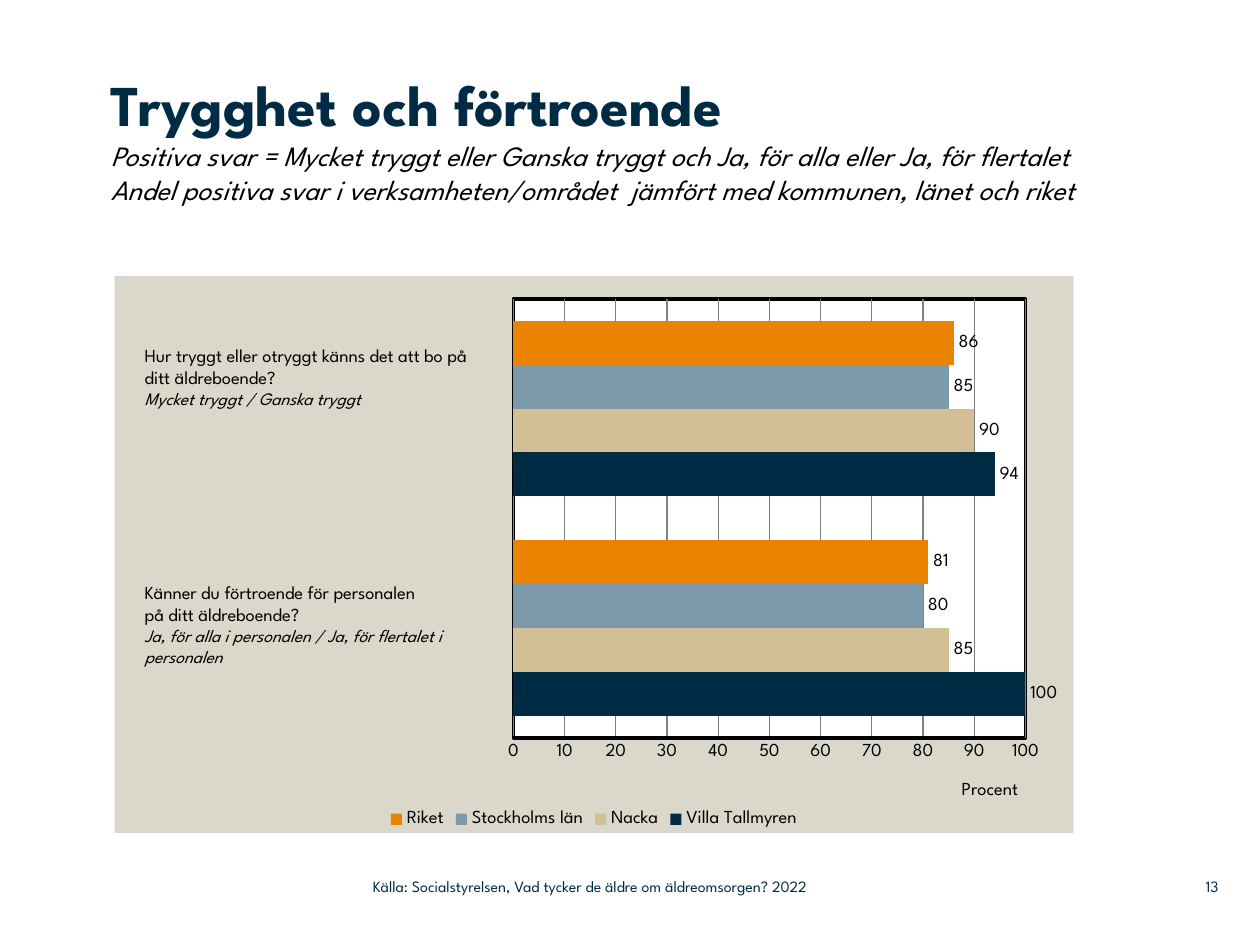
from pptx import Presentation
from pptx.chart.data import CategoryChartData
from pptx.dml.color import RGBColor
from pptx.enum.chart import XL_CHART_TYPE as Chart, XL_LABEL_POSITION as LabelPos
from pptx.enum.chart import XL_LEGEND_POSITION as LegendPos, XL_TICK_MARK as Tick
from pptx.enum.text import MSO_ANCHOR as Anchor, PP_ALIGN as Align
from pptx.oxml import parse_xml
from pptx.oxml.ns import nsdecls
from pptx.util import Inches, Pt

NAVY = RGBColor(0x00, 0x2B, 0x45)
SAND = RGBColor(0xD3, 0xBF, 0x96)
STEEL = RGBColor(0x7D, 0x9A, 0xAA)
ORANGE = RGBColor(0xE9, 0x83, 0x00)
PANEL = RGBColor(0xDA, 0xD7, 0xCB)
GREY = RGBColor(0x80, 0x80, 0x80)
WHITE = RGBColor(0xFF, 0xFF, 0xFF)
BLACK = RGBColor(0, 0, 0)
FONT = "League Spartan"

TITLE = [
    ("Trygghet och förtroende", 33, NAVY, True, False),
    ("Positiva svar = Mycket tryggt eller Ganska tryggt och Ja, för alla eller Ja, för flertalet",
     16, BLACK, False, True),
    ("Andel positiva svar i verksamheten/området  jämfört med kommunen, länet och riket",
     16, BLACK, False, True),
]
QUESTIONS = [
    ((1.05, 2.68, 2.98, 0.81), [
        ("Hur tryggt eller otryggt känns det att bo på ditt äldreboende?", 10.5, BLACK, False, False),
        ("Mycket tryggt / Ganska tryggt", 10, BLACK, False, True),
    ]),
    ((1.05, 4.56, 3, 0.98), [
        ("Känner du förtroende för personalen", 10.5, BLACK, False, False),
        ("på ditt äldreboende?", 10.5, BLACK, False, False),
        ("Ja, för alla i personalen / Ja, för flertalet i personalen", 10, BLACK, False, True),
    ]),
]
SOURCE = [("Källa: Socialstyrelsen, Vad tycker de äldre om äldreomsorgen? 2022", 9, NAVY, False, False)]
PAGE = [("13", 9, NAVY, False, False)]
SERIES = [
    ("Villa Tallmyren", (100, 94), NAVY),
    ("Nacka", (85, 90), SAND),
    ("Stockholms län", (80, 85), STEEL),
    ("Riket", (81, 86), ORANGE),
]
PLOT = {"x": 0.416, "y": 0.041, "w": 0.534, "h": 0.789}
AXIS_TITLE = {"x": 0.88, "y": 0.9}


def style(font, size, color=BLACK, bold=False, italic=False):
    font.name, font.size, font.bold, font.italic = FONT, Pt(size), bold, italic
    font.color.rgb = color


def add_text(slide, box, lines, inset=True, anchor=Anchor.TOP, align=Align.LEFT):
    tf = slide.shapes.add_textbox(*map(Inches, box)).text_frame
    tf.word_wrap = True
    tf.vertical_anchor = anchor
    if not inset:
        tf.margin_left = tf.margin_top = tf.margin_right = tf.margin_bottom = 0
    for i, (text, *look) in enumerate(lines):
        p = tf.add_paragraph() if i else tf.paragraphs[0]
        p.text, p.alignment = text, align
        style(p.font, *look)


def manual_layout(places, inner=False):
    parts = '<c:layoutTarget val="inner"/>' if inner else ""
    parts += "".join(f'<c:{k}Mode val="edge"/>' for k in "xy")
    parts += "".join(f'<c:{k} val="{v}"/>' for k, v in places.items())
    return parse_xml(f'<c:layout {nsdecls("c")}><c:manualLayout>{parts}</c:manualLayout></c:layout>')


def fill_xml(color, line=""):
    return parse_xml(f'<c:spPr {nsdecls("c", "a")}><a:solidFill><a:srgbClr val="{color}"/>'
                     f'</a:solidFill>{line}</c:spPr>')


def add_bars(slide):
    data = CategoryChartData()
    data.categories = ["1", "2"]
    for name, values, _ in SERIES:
        data.add_series(name, values)
    box = map(Inches, (0.91, 2.19, 7.61, 4.42))
    chart = slide.shapes.add_chart(Chart.BAR_CLUSTERED, *box, data).chart
    style(chart.font, 10.5)
    chart.has_title = False
    chart.has_legend = True
    chart.legend.position = LegendPos.BOTTOM
    chart.legend.include_in_layout = False
    style(chart.legend.font, 10.5)

    plot = chart.plots[0]
    plot.gap_width, plot.overlap = 100, 0
    plot.vary_by_categories = False
    for series, (_, _, color) in zip(plot.series, SERIES):
        series.format.fill.solid()
        series.format.fill.fore_color.rgb = color
        labels = series.data_labels
        labels.show_value = True
        labels.position = LabelPos.OUTSIDE_END
        style(labels.font, 10.5)

    chart.category_axis.visible = False
    axis = chart.value_axis
    axis.minimum_scale, axis.maximum_scale, axis.major_unit = 0, 100, 10
    axis.major_tick_mark = axis.minor_tick_mark = Tick.NONE
    axis.format.line.color.rgb = BLACK
    axis.format.line.width = Pt(2)
    axis.major_gridlines.format.line.color.rgb = GREY
    axis.major_gridlines.format.line.width = Pt(0.75)
    style(axis.tick_labels.font, 10.5)
    p = axis.axis_title.text_frame.paragraphs[0]
    p.text = "Procent"
    style(p.font, 10.5)
    title = axis.axis_title._element
    for old in title.findall("{*}layout"):
        title.remove(old)
    title.find("{*}tx").addnext(manual_layout(AXIS_TITLE))

    area = chart._chartSpace.chart.plotArea
    for old in area.findall("{*}layout"):
        area.remove(old)
    area.insert(0, manual_layout(PLOT, inner=True))
    border = f'<a:ln w="{Pt(2)}"><a:solidFill><a:srgbClr val="{BLACK}"/></a:solidFill></a:ln>'
    area.append(fill_xml(WHITE, border))
    chart._chartSpace.chart.addnext(fill_xml(PANEL, "<a:ln><a:noFill/></a:ln>"))


prs = Presentation()
prs.slide_width, prs.slide_height = Inches(10), Inches(7.5)
slide = prs.slides.add_slide(prs.slide_layouts[6])
add_text(slide, (0.88, 0.55, 7.75, 1.64), TITLE, inset=False)
add_bars(slide)
for box, lines in QUESTIONS:
    add_text(slide, box, lines)
add_text(slide, (2.96, 6.89, 4.43, 0.29), SOURCE, inset=False, anchor=Anchor.MIDDLE)
add_text(slide, (9.2, 6.89, 0.47, 0.29), PAGE, inset=False, anchor=Anchor.MIDDLE, align=Align.RIGHT)
prs.save("out.pptx")
